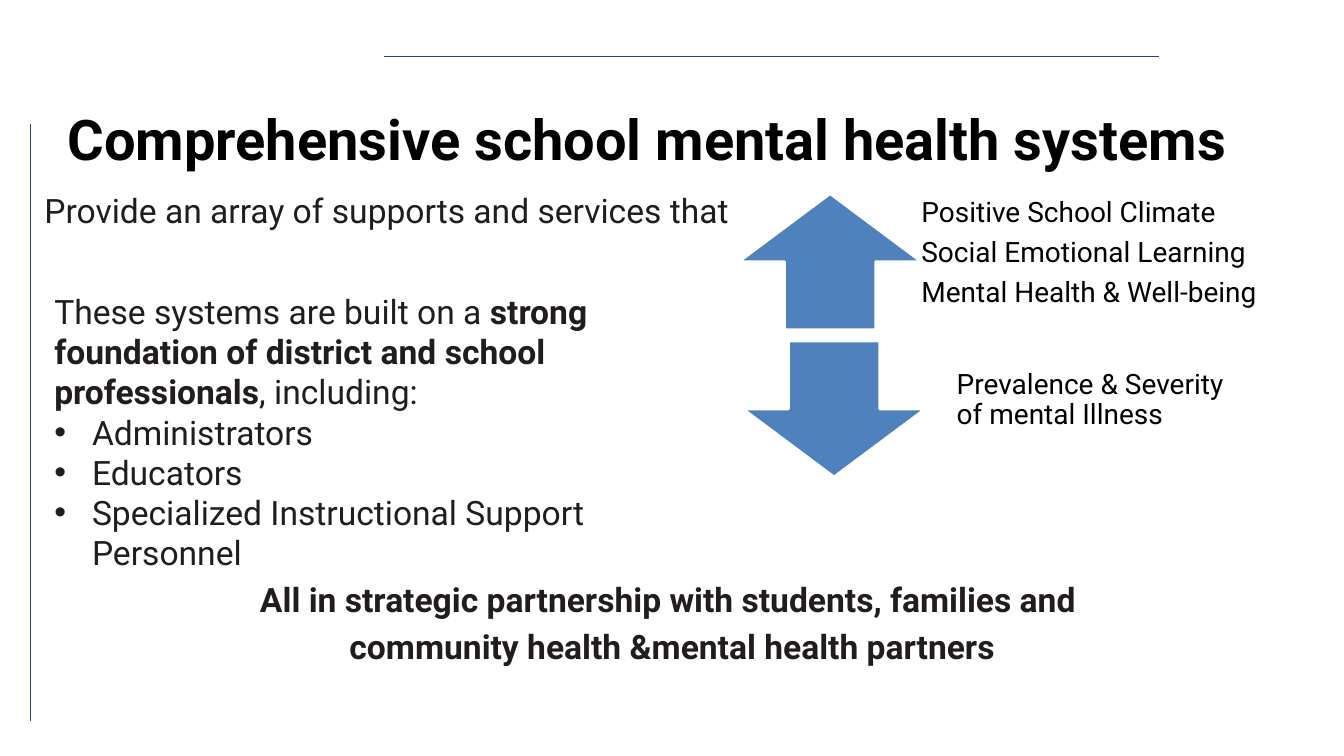
import pptx
import pptx.dml.color
import pptx.enum.shapes
import pptx.enum.text
import pptx.oxml.ns
import pptx.util
from lxml import etree

Cm = pptx.util.Cm
Pt = pptx.util.Pt
Align = pptx.enum.text.PP_ALIGN
Anchor = pptx.enum.text.MSO_ANCHOR
Shape = pptx.enum.shapes.MSO_SHAPE
qn = pptx.oxml.ns.qn

COLORS = {"rule": "18468B", "arrow": "4F81BD", "white": "FFFFFF",
          "black": "000000", "body": "211D1E"}


def color(name):
    """Return the named colour."""
    return pptx.dml.color.RGBColor.from_string(COLORS[name])


class Deck:
    """Hold the style and the current slide."""

    def __init__(self, font="Roboto"):
        """Start a wide deck with one title-only slide."""
        self.font = font
        self.show = pptx.Presentation()
        self.show.slide_width, self.show.slide_height = Cm(33.87), Cm(19.05)
        self.slide = self.show.slides.add_slide(self.show.slide_layouts[5])

    def rule(self, x1, y1, x2, y2):
        """Draw a thin line."""
        line = self.slide.shapes.add_connector(
            pptx.enum.shapes.MSO_CONNECTOR.STRAIGHT, Cm(x1), Cm(y1), Cm(x2), Cm(y2))
        line.line.color.rgb = color("rule")
        line.line.width = Pt(0.5)
        etree.SubElement(line._element.spPr, qn("a:effectLst"))

    def arrow(self, kind, x, y, w, h):
        """Draw a block arrow."""
        shape = self.slide.shapes.add_shape(kind, Cm(x), Cm(y), Cm(w), Cm(h))
        shape.shadow.inherit = False
        shape.fill.solid()
        shape.fill.fore_color.rgb = color("arrow")
        shape.line.color.rgb = color("white")
        shape.line.width = Pt(2)

    def title(self, words, box, **style):
        """Fill and place the title."""
        self.fill(self.slide.shapes.title, box, [words], **style)

    def text(self, paras, box, **style):
        """Add a text box."""
        shape = self.slide.shapes.add_textbox(0, 0, 0, 0)
        self.fill(shape, box, paras, **style)

    def fill(self, shape, box, paras, size=24, ink="body", bold=False,
             align=Align.LEFT, anchor=Anchor.TOP, pad=(0, 0, 0, 0),
             lead=None, before=0, after=0, bullets=0):
        """Set paragraphs, bolding every second part and marking the last few."""
        shape.left, shape.top, shape.width, shape.height = map(Cm, box)
        frame = shape.text_frame
        frame.word_wrap = True
        frame.auto_size = pptx.enum.text.MSO_AUTO_SIZE.NONE
        frame.vertical_anchor = anchor
        (frame.margin_left, frame.margin_top,
         frame.margin_right, frame.margin_bottom) = map(Cm, pad)
        for i, words in enumerate(paras):
            para = frame.add_paragraph() if i else frame.paragraphs[0]
            if i >= len(paras) - bullets:
                self.bullet(para)
            para.alignment = align
            para.space_before = Pt(before if i else 0)
            para.space_after = Pt(after)
            if lead:
                para.line_spacing = lead
            parts = [words] if isinstance(words, str) else words
            for j, part in enumerate(parts):
                run = para.add_run()
                run.text = part
                run.font.name = self.font
                run.font.size = Pt(size)
                run.font.bold = bold or j % 2 == 1
                run.font.color.rgb = color(ink)

    def bullet(self, para):
        """Give a paragraph a hanging bullet."""
        props = para._p.get_or_add_pPr()
        props.set("marL", str(Cm(0.95)))
        props.set("indent", str(-Cm(0.95)))
        etree.SubElement(props, qn("a:buFont")).set("typeface", "Arial")
        etree.SubElement(props, qn("a:buChar")).set("char", "•")


def main():
    """Build the slide and save it."""
    deck = Deck()
    deck.rule(9.68, 1.42, 29.21, 1.42)
    deck.rule(0.77, 3.13, 0.77, 18.16)
    deck.title("Comprehensive school mental health systems",
               (1.7, 2.64, 30.48, 1.7), size=40, ink="black", bold=True)
    deck.text(["Provide an array of supports and services that"],
              (1.12, 4.78, 18.03, 1.02))

    pad = (0.25, 0.13, 0.25, 0.13)
    label = dict(size=20, ink="black", anchor=Anchor.MIDDLE,
                 pad=(0.41, 0, 0.41, 0.41), lead=0.9, after=7)
    deck.arrow(Shape.UP_ARROW, 18.62, 4.88, 4.6, 3.43)
    deck.text(["Positive School Climate", "Social Emotional Learning",
               "Mental Health & Well-being"], (22.81, 4.88, 9.78, 3.43), **label)
    deck.arrow(Shape.DOWN_ARROW, 18.72, 8.59, 4.6, 3.43)
    deck.text(["Prevalence & Severity of mental Illness"],
              (23.7, 8.59, 7.9, 3.43), **label)

    deck.text([("These systems are built on a ",
                "strong foundation of district and school professionals",
                ", including:"),
               "Administrators", "Educators",
               "Specialized Instructional Support Personnel"],
              (1.12, 7.19, 16.94, 7.44), pad=pad, bullets=3)
    deck.text(["All in strategic partnership with students, families and ",
               "community health &mental health partners"],
              (0.28, 14.45, 33.32, 2.6), pad=pad, bold=True,
              align=Align.CENTER, before=5)
    deck.show.save("out.pptx")


if __name__ == "__main__":
    main()
